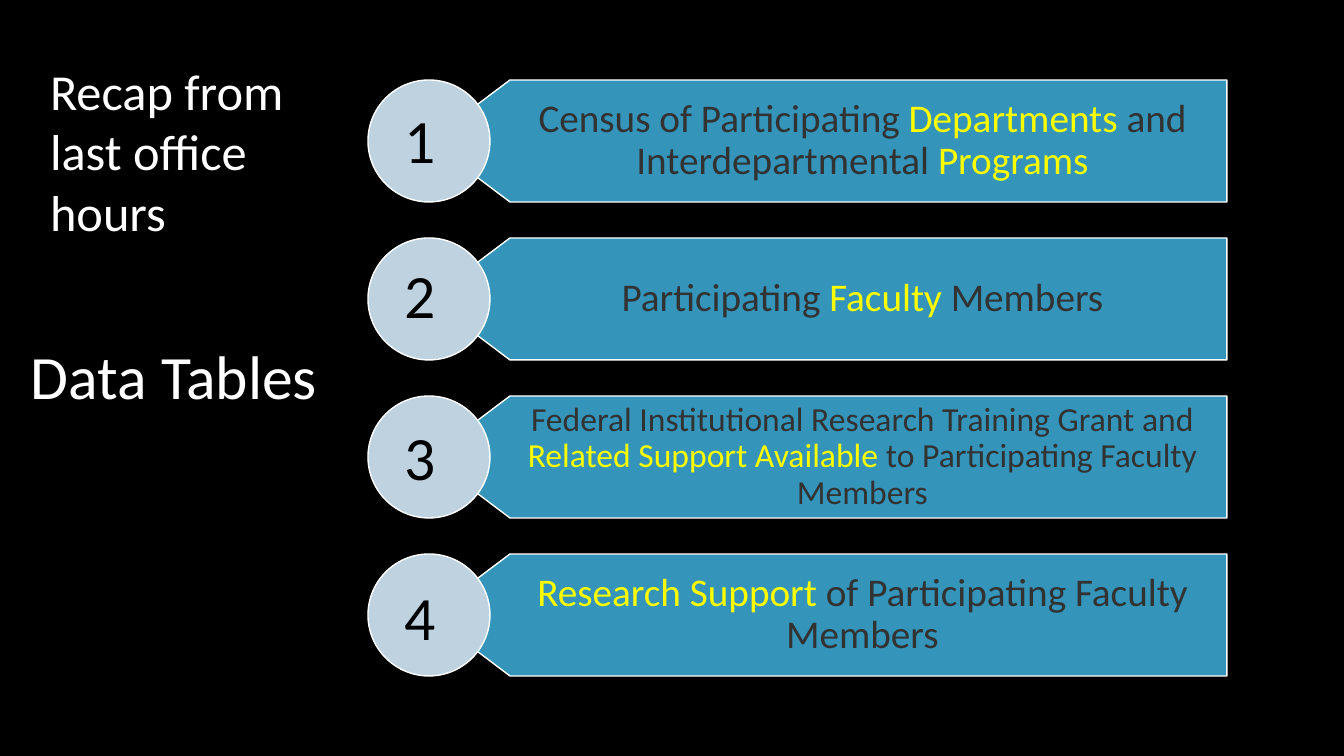
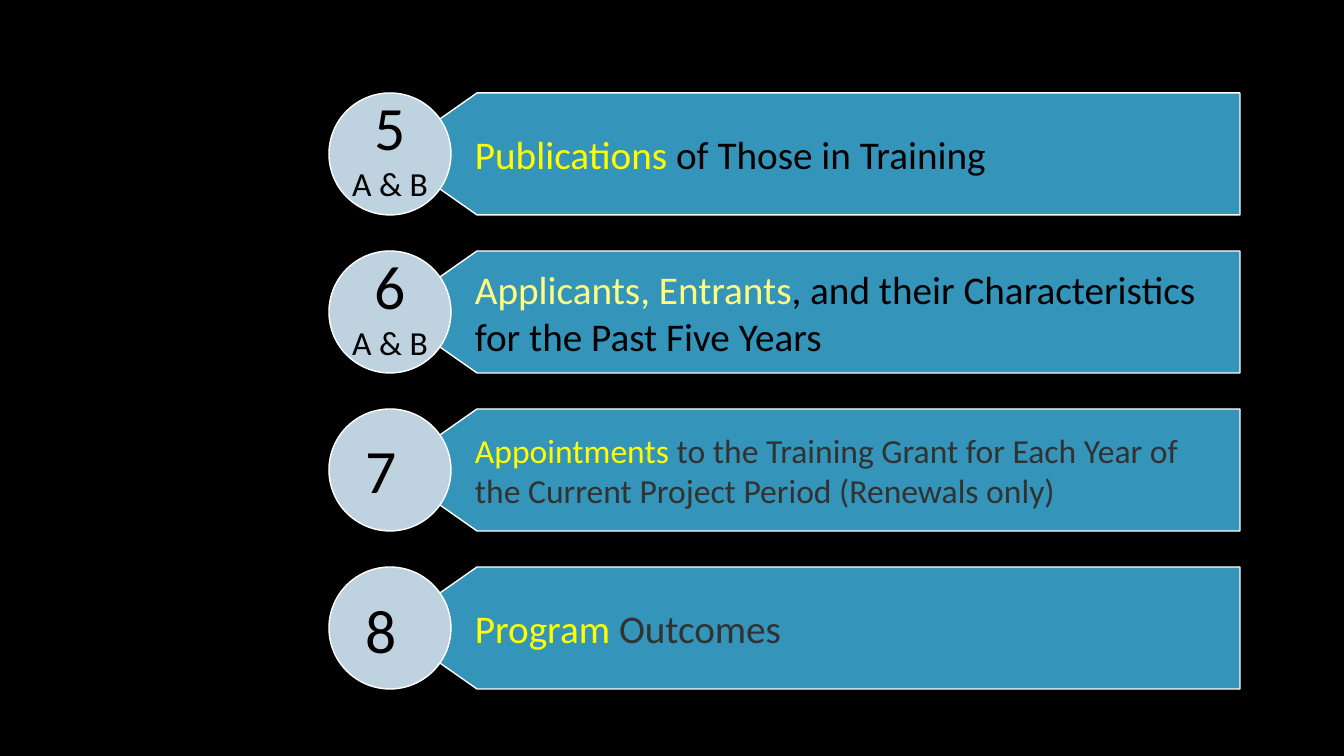
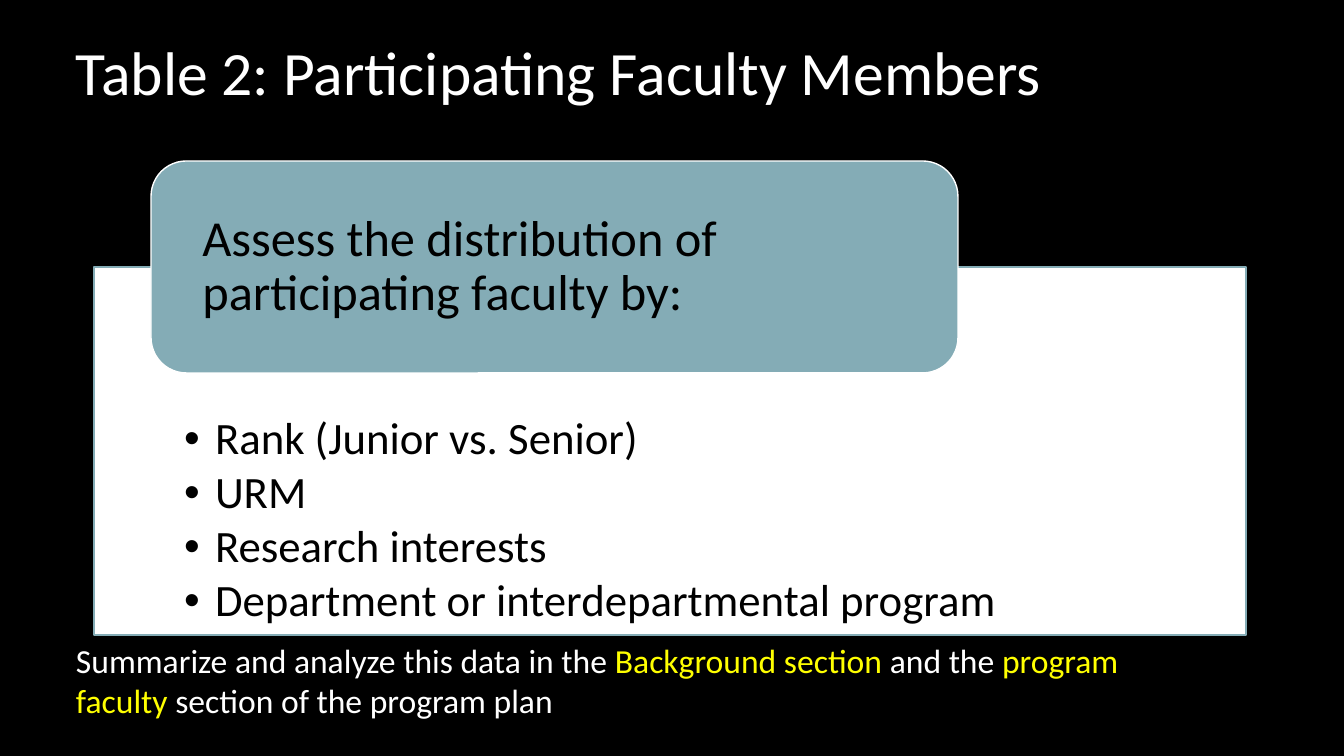
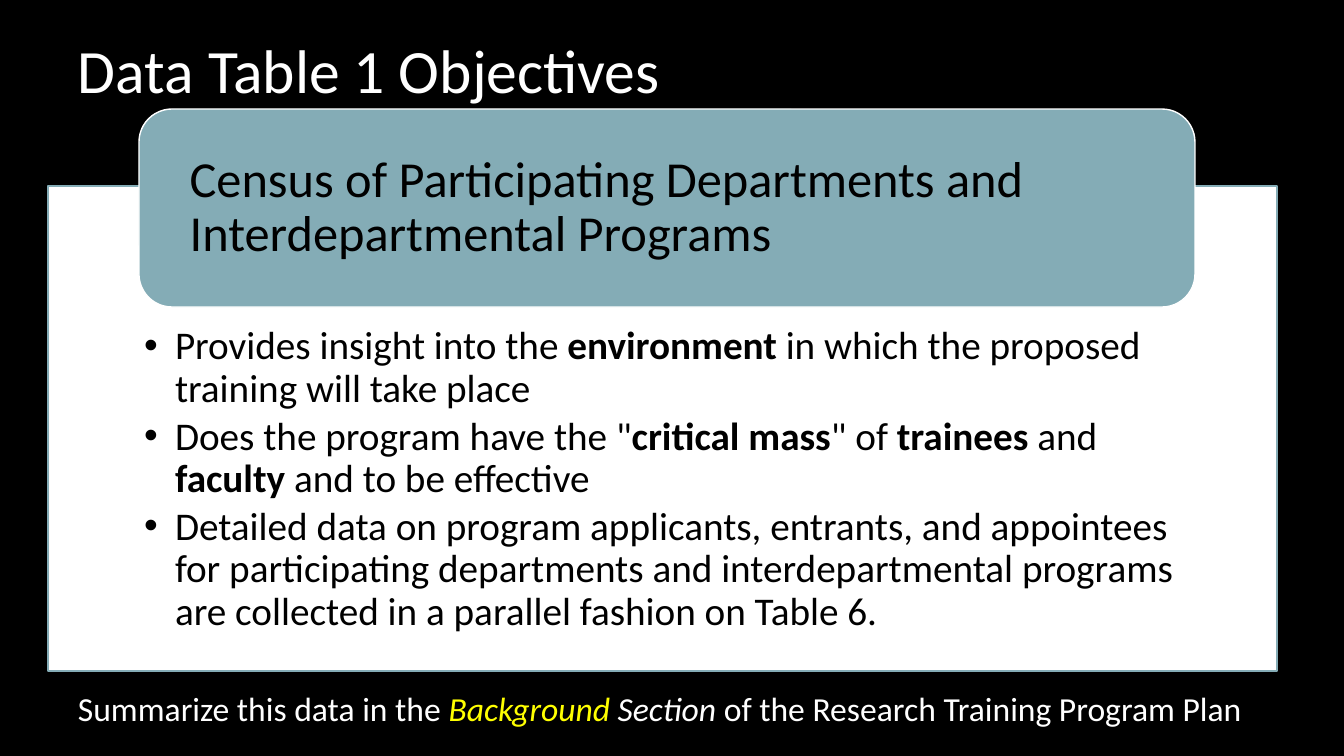
"""Build four slides about the data tables of a training grant."""
from pptx import Presentation
from pptx.dml.color import RGBColor
from pptx.enum.shapes import MSO_SHAPE as Shape
from pptx.enum.text import MSO_ANCHOR as Anchor, MSO_AUTO_SIZE as AutoSize, PP_ALIGN as Align
from pptx.util import Emu, Pt

SCALE = 12192000 / 1344
FONT = "Calibri"
BLACK = RGBColor(0x00, 0x00, 0x00)
WHITE = RGBColor(0xFF, 0xFF, 0xFF)
DARK = RGBColor(0x31, 0x32, 0x31)
YELLOW = RGBColor(0xFF, 0xFF, 0x00)
PALE_YELLOW = RGBColor(0xFF, 0xFF, 0x82)
BLUE = RGBColor(0x34, 0x94, 0xBA)
PALE_BLUE = RGBColor(0xBF, 0xD2, 0xE0)
TEAL = RGBColor(0x84, 0xAC, 0xB6)
CIRCLE = 122
PITCH = 158


def px(*lengths):
    return [Emu(round(length * SCALE)) for length in lengths]


def write(shape, paragraphs, size, align=Align.LEFT, anchor=Anchor.TOP,
          insets=(10, 5, 10, 5), spacing=1.0, after=0):
    """Fill a shape with paragraphs, each a list of (text, colour, style)."""
    frame = shape.text_frame
    frame.word_wrap = True
    frame.auto_size = AutoSize.NONE
    frame.vertical_anchor = anchor
    (frame.margin_left, frame.margin_top,
     frame.margin_right, frame.margin_bottom) = px(*insets)
    for index, spans in enumerate(paragraphs):
        para = frame.paragraphs[0] if index == 0 else frame.add_paragraph()
        para.alignment = align
        para.line_spacing = spacing
        para.space_before = Pt(0)
        para.space_after = Pt(after)
        for text, colour, *style in spans:
            span = para.add_run()
            span.text = text
            span.font.name = FONT
            span.font.size = Pt(size)
            span.font.color.rgb = colour
            span.font.bold = "bold" in style
            span.font.italic = "italic" in style


deck = Presentation()
deck.slide_width, deck.slide_height = px(1344, 756)
background = deck.slide_master.background.fill
background.solid()
background.fore_color.rgb = BLACK
content_layout, title_layout, blank_layout = [deck.slide_layouts[index] for index in (1, 5, 6)]
painted = []
titles = []

recap_rows = [
    ("1", 17, 28, [("Census of Participating ", DARK), ("Departments ", YELLOW),
                   ("and Interdepartmental ", DARK), ("Programs", YELLOW)]),
    ("2", 14, 28, [("Participating ", DARK), ("Faculty ", YELLOW), ("Members", DARK)]),
    ("3", 18, 24, [("Federal Institutional Research Training Grant and ", DARK),
                   ("Related Support Available ", YELLOW),
                   ("to Participating Faculty Members", DARK)]),
    ("4", 20, 28, [("Research Support ", YELLOW),
                   ("of Participating Faculty Members", DARK)]),
]
later_rows = [
    ("5", -9, 28, [("Publications ", YELLOW), ("of Those in Training", BLACK)]),
    ("6", -8, 28, [("Applicants, Entrants", PALE_YELLOW),
                   (", and their Characteristics for the Past Five Years", BLACK)]),
    ("7", 18, 24, [("Appointments ", YELLOW),
                   ("to the Training Grant for Each Year of the Current Project Period "
                    "(Renewals only)", DARK)]),
    ("8", 20, 28, [("Program ", YELLOW), ("Outcomes", DARK)]),
]
row_pages = [
    (title_layout, 368, 80, 510, 1227, Align.CENTER, 0.9, recap_rows),
    (blank_layout, 329, 93, 477, 1240, Align.LEFT, 1.0, later_rows),
]

for layout, left, first_top, shoulder, right, align, spacing, rows in row_pages:
    page = deck.slides.add_slide(layout)
    for index, (number, drop, size, spans) in enumerate(rows):
        top = first_top + index * PITCH
        middle, bottom = top + CIRCLE // 2, top + CIRCLE
        tip = left + CIRCLE // 2
        outline = page.shapes.build_freeform(right, bottom, scale=SCALE)
        outline.add_line_segments(
            [(shoulder, bottom), (tip, middle), (shoulder, top), (right, top)])
        arrow = outline.convert_to_shape()
        write(arrow, [spans], size, align, Anchor.MIDDLE, (85, 8, 16, 8), spacing)
        circle = page.shapes.add_shape(Shape.OVAL, *px(left, top, CIRCLE, CIRCLE))
        painted += [(arrow, BLUE, WHITE), (circle, PALE_BLUE, WHITE)]
        if number in "56":
            label = page.shapes.add_textbox(*px(left + 7, top + drop, 108, 126))
            write(label, [[(number, BLACK)], [("A & B", BLACK)]], 44, Align.CENTER)
            label.text_frame.paragraphs[1].runs[0].font.size = Pt(24)
        else:
            label = page.shapes.add_textbox(*px(left + 27, top + drop, 67, 85))
            write(label, [[(number, BLACK)]], 44)
    if layout is title_layout:
        titles.append((page, "Data Tables", (21, 324, 353, 111)))
        recap = page.shapes.add_textbox(*px(40, 55, 281, 194))
        write(recap, [[("Recap from last office hours", WHITE)]], 36)

faculty_list = [[(text, BLACK)] for text in (
    "Rank (Junior vs. Senior)", "URM", "Research interests",
    "Department or interdepartmental program")]
faculty_note = [
    ("Summarize and analyze this data in the ", WHITE), ("Background section ", YELLOW),
    ("and the ", WHITE), ("program faculty ", YELLOW),
    ("section of the program plan", WHITE)]
census_list = [
    [("Provides insight into the ", BLACK), ("environment", BLACK, "bold"),
     (" in which the proposed training will take place", BLACK)],
    [("Does the program have the \"", BLACK), ("critical mass", BLACK, "bold"),
     ("\" of ", BLACK), ("trainees", BLACK, "bold"), (" and ", BLACK),
     ("faculty", BLACK, "bold"), (" and to be effective", BLACK)],
    [("Detailed data on program applicants, entrants, and appointees for participating "
      "departments and interdepartmental programs are collected in a parallel fashion "
      "on Table 6.", BLACK)],
]
census_note = [
    ("Summarize this data in the ", WHITE), ("Background", YELLOW, "italic"),
    (" Section ", WHITE, "italic"), ("of the Research Training Program Plan", WHITE)]
list_pages = [
    ("Table 2: Participating Faculty Members", (66, 23, 1210, 106),
     "Assess the distribution of participating faculty by:", (151, 161, 807, 212),
     faculty_list, 32, (94, 267, 1152, 368), (90, 149, 90, 25),
     faculty_note, (66, 635, 1149, 92)),
    ("Data Table 1 Objectives", (68, 21, 1210, 106),
     "Census of Participating Departments and Interdepartmental Programs",
     (139, 109, 1056, 198),
     census_list, 28, (48, 186, 1229, 485), (96, 140, 96, 28),
     census_note, (68, 683, 1220, 50)),
]

for (title, title_box, heading, heading_box, items, size, panel_box, insets,
     note, note_box) in list_pages:
    page = deck.slides.add_slide(content_layout)
    titles.append((page, title, title_box))
    panel = page.placeholders[1]
    panel.left, panel.top, panel.width, panel.height = px(*panel_box)
    write(panel, items, size, insets=insets, spacing=0.9, after=4)
    indent = px(31)[0]
    for para in panel.text_frame.paragraphs:
        properties = para._p.get_or_add_pPr()
        properties.set("marL", str(indent))
        properties.set("indent", str(-indent))
    header = page.shapes.add_shape(Shape.ROUNDED_RECTANGLE, *px(*heading_box))
    write(header, [[(heading, BLACK)]], 36, anchor=Anchor.MIDDLE,
          insets=(41, 10, 41, 10), spacing=0.9)
    painted += [(panel, WHITE, TEAL), (header, TEAL, WHITE)]
    write(page.shapes.add_textbox(*px(*note_box)), [note], 24)

for page, text, box in titles:
    title = page.shapes.title
    title.left, title.top, title.width, title.height = px(*box)
    write(title, [[(text, WHITE)]], 44, anchor=Anchor.MIDDLE, spacing=0.9)

for shape, fill, line in painted:
    shape.fill.solid()
    shape.fill.fore_color.rgb = fill
    shape.line.color.rgb = line
    shape.line.width = Pt(1)
    if not shape.is_placeholder:
        shape.shadow.inherit = False

deck.save("out.pptx")
